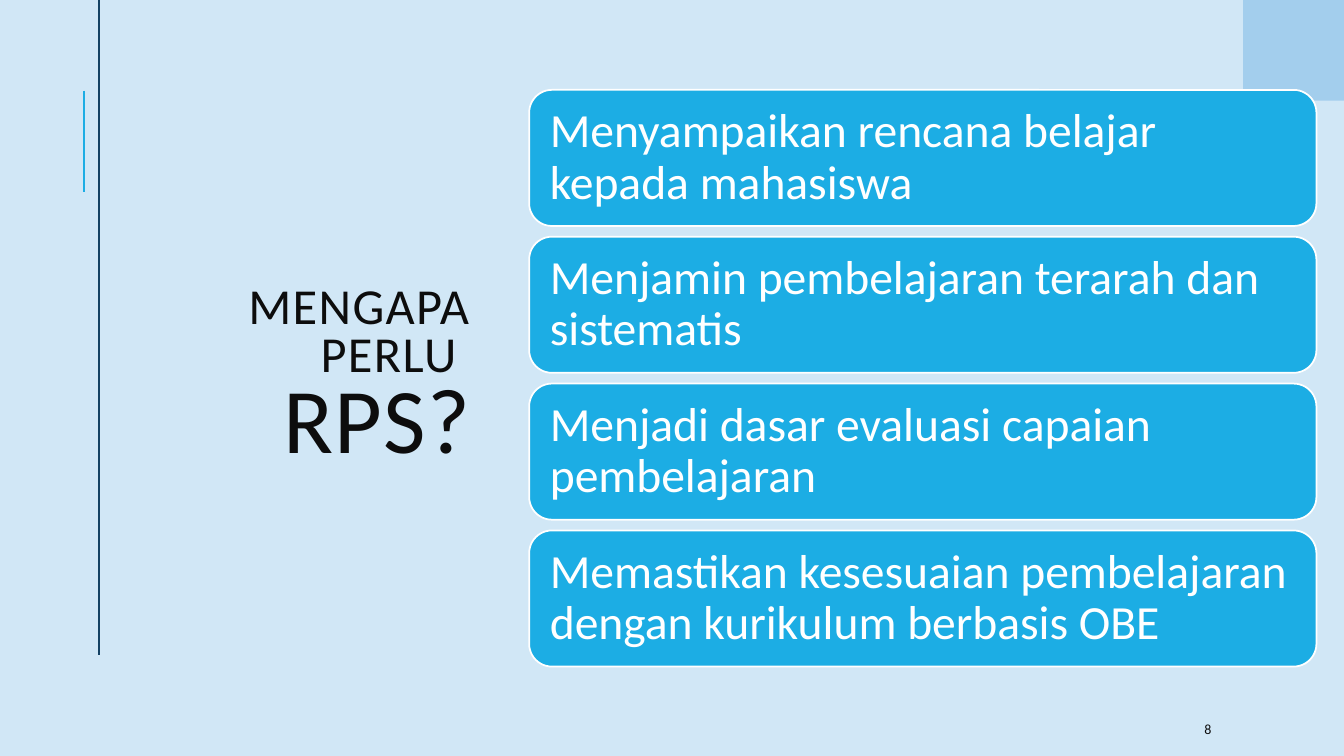
from dataclasses import dataclass

from lxml.etree import SubElement
from pptx import Presentation
from pptx.dml.color import RGBColor
from pptx.enum.shapes import MSO_CONNECTOR as Connector, MSO_SHAPE as Shape
from pptx.enum.text import MSO_ANCHOR as Anchor, MSO_AUTO_SIZE as AutoSize, PP_ALIGN as Align
from pptx.oxml.ns import qn
from pptx.util import Pt


@dataclass(frozen=True)
class Theme:
    font: str = "Calibri"
    background: str = "D1E7F6"
    accent: str = "1CADE4"
    navy: str = "134163"
    corner: str = "A3CEED"
    ink: str = "0D0D0D"
    white: str = "FFFFFF"
    title_size: int = 36
    emphasis_size: int = 66
    card_size: int = 34
    number_size: int = 10


THEME = Theme()
REASONS = [
    "Menyampaikan rencana belajar kepada mahasiswa",
    "Menjamin pembelajaran terarah dan sistematis",
    "Menjadi dasar evaluasi capaian pembelajaran",
    "Memastikan kesesuaian pembelajaran dengan kurikulum berbasis OBE",
]
CARD_LEFT, CARD_TOP, CARD_WIDTH, CARD_HEIGHT = 378, 64.2, 562.3, 97.2
CARD_PITCH = 104.9


def color(value):
    return RGBColor.from_string(value)


def add_run(paragraph, text, size, ink):
    run = paragraph.add_run()
    run.text = text
    run.font.name = THEME.font
    run.font.size = Pt(size)
    run.font.color.rgb = color(ink)
    return run


def add_rule(slide, x, top, bottom, ink):
    line = slide.shapes.add_connector(Connector.STRAIGHT, Pt(x), Pt(top), Pt(x), Pt(bottom))
    line.line.color.rgb = color(ink)
    line.line.width = Pt(1.5)
    SubElement(line._element.spPr, qn("a:effectLst"))


def add_block(slide, kind, left, top, width, height, fill):
    shape = slide.shapes.add_shape(kind, Pt(left), Pt(top), Pt(width), Pt(height))
    shape.shadow.inherit = False
    shape.fill.solid()
    shape.fill.fore_color.rgb = color(fill)
    shape.line.fill.background()
    return shape


def add_card(slide, top, text):
    card = add_block(slide, Shape.ROUNDED_RECTANGLE, CARD_LEFT, top,
                     CARD_WIDTH, CARD_HEIGHT, THEME.accent)
    card.line.color.rgb = color(THEME.white)
    card.line.width = Pt(1.25)
    frame = card.text_frame
    frame.word_wrap = True
    frame.vertical_anchor = Anchor.MIDDLE
    frame.margin_left = frame.margin_right = Pt(10)
    frame.margin_top = frame.margin_bottom = Pt(4)
    paragraph = frame.paragraphs[0]
    paragraph.alignment = Align.LEFT
    paragraph.line_spacing = 0.9
    add_run(paragraph, text, THEME.card_size, THEME.white)


def fill_title(slide):
    title = slide.shapes.title
    title.left, title.top, title.width, title.height = Pt(76.3), Pt(63.4), Pt(267.1), Pt(413.3)
    frame = title.text_frame
    frame.word_wrap = True
    frame.auto_size = AutoSize.NONE
    frame.vertical_anchor = Anchor.MIDDLE
    paragraph = frame.paragraphs[0]
    paragraph.alignment = Align.RIGHT
    paragraph.line_spacing = 0.8
    lead = add_run(paragraph, "MENGAPA PERLU ", THEME.title_size, THEME.ink)
    paragraph.add_line_break()
    line_break = paragraph._p.find(qn("a:br"))
    SubElement(line_break, qn("a:rPr"), sz=str(THEME.title_size * 100))
    emphasis = add_run(paragraph, "RPS?", THEME.emphasis_size, THEME.ink)
    for run in (lead, emphasis):
        run._r.get_or_add_rPr().set("spc", "100")


def add_page_number(slide, text):
    box = slide.shapes.add_textbox(Pt(853.2), Pt(509.8), Pt(76.3), Pt(21.6))
    box.text_frame.word_wrap = True
    box.text_frame.vertical_anchor = Anchor.MIDDLE
    add_run(box.text_frame.paragraphs[0], text, THEME.number_size, THEME.ink)


def main():
    presentation = Presentation()
    presentation.slide_width, presentation.slide_height = Pt(960), Pt(540)
    slide = presentation.slides.add_slide(presentation.slide_layouts[5])
    slide.background.fill.solid()
    slide.background.fill.fore_color.rgb = color(THEME.background)
    add_rule(slide, 59.8, 64.8, 136.8, THEME.accent)
    add_rule(slide, 70.6, 0, 468, THEME.navy)
    add_block(slide, Shape.RECTANGLE, 888, 0, 72, 72, THEME.corner)
    fill_title(slide)
    for index, reason in enumerate(REASONS):
        add_card(slide, CARD_TOP + index * CARD_PITCH, reason)
    add_page_number(slide, "8")
    presentation.save("out.pptx")


if __name__ == "__main__":
    main()
